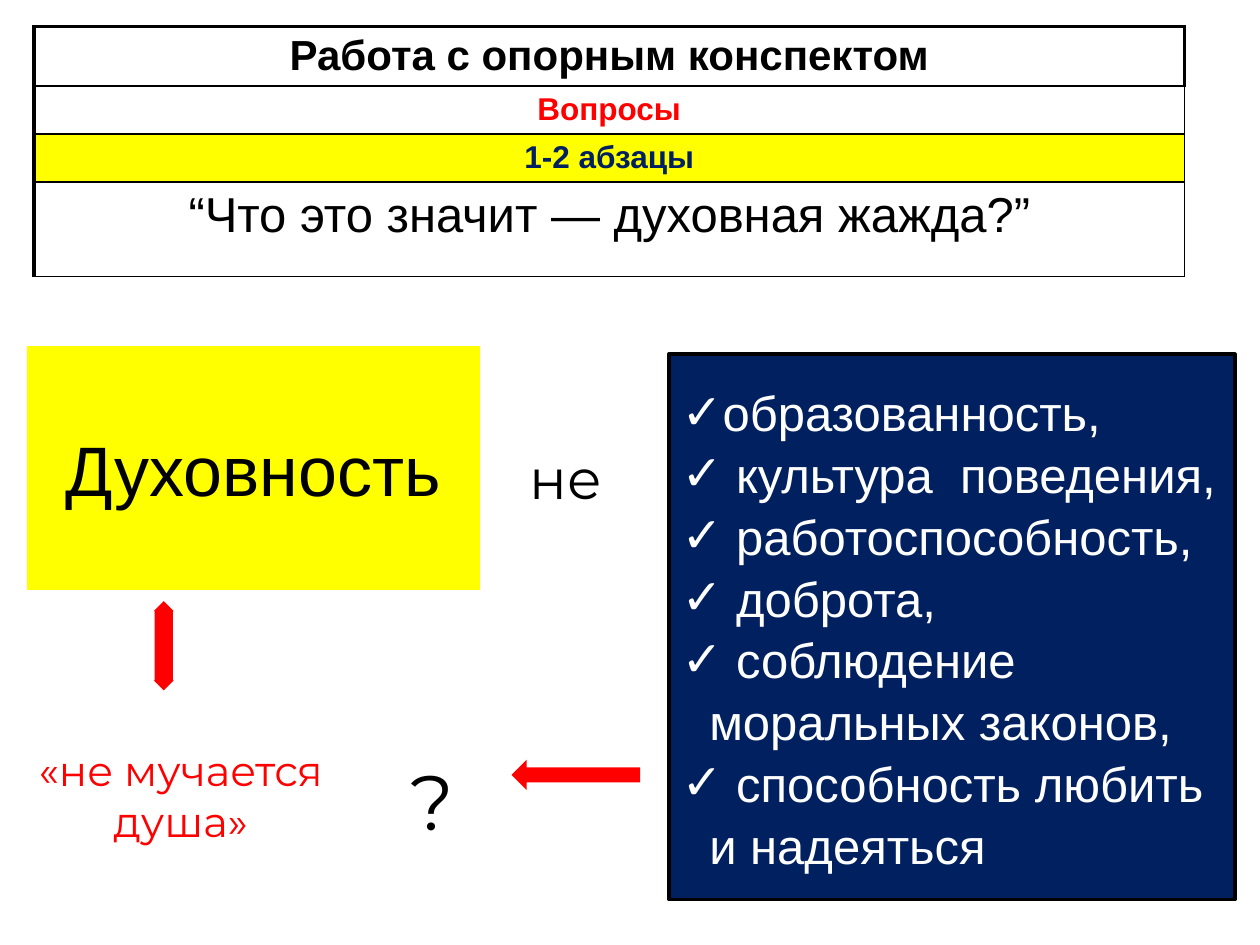
from dataclasses import dataclass

from lxml import etree
from pptx import Presentation
from pptx.dml.color import RGBColor
from pptx.enum import shapes, text
from pptx.oxml import ns
from pptx.util import Inches, Pt


@dataclass(frozen=True)
class Theme:
    black: str = "000000"
    white: str = "FFFFFF"
    red: str = "FF0000"
    yellow: str = "FFFF00"
    navy: str = "002060"
    sans: str = "Arial"
    accent: str = "Montserrat"
    small: int = 18
    heading: int = 24
    body: int = 28
    link: int = 32
    concept: int = 40
    question: int = 44


theme = Theme()


def paint(shape, fill, line=None):
    shape.fill.solid()
    shape.fill.fore_color.rgb = RGBColor.from_string(fill)
    if line:
        shape.line.color.rgb = RGBColor.from_string(line)
        shape.line.width = Pt(2)
    else:
        shape.line.fill.background()


def write(paragraph, words, size, color, font, bold=False, align=text.PP_ALIGN.CENTER):
    paragraph.alignment = align
    run = paragraph.add_run()
    run.text = words
    run.font.size = Pt(size)
    run.font.name = font
    run.font.bold = bold
    run.font.color.rgb = RGBColor.from_string(color)


prs = Presentation()
prs.slide_width, prs.slide_height = Inches(10), Inches(7.5)
slide = prs.slides.add_slide(prs.slide_layouts[1])
empty_title = slide.shapes.title.element
empty_title.getparent().remove(empty_title)

# Qualities that are not yet spirituality
qualities = slide.placeholders[1]
qualities.left, qualities.top = Inches(5.31), Inches(2.81)
qualities.width, qualities.height = Inches(4.49), Inches(4.33)
paint(qualities, theme.navy, theme.black)
frame = qualities.text_frame
frame.word_wrap = True
frame.auto_size = text.MSO_AUTO_SIZE.NONE
frame.vertical_anchor = text.MSO_ANCHOR.MIDDLE
quality_names = [
    "образованность,",
    " культура  поведения,",
    " работоспособность,",
    " доброта,",
    " соблюдение моральных законов,",
    " способность любить и надеяться",
]
for i, name in enumerate(quality_names):
    item = frame.paragraphs[0] if i == 0 else frame.add_paragraph()
    item.space_before = Pt(0)
    item.line_spacing = 1.05
    write(item, name, theme.body, theme.white, theme.sans, align=text.PP_ALIGN.LEFT)
    props = item._p.get_or_add_pPr()
    props.set("marL", str(Inches(0.22)))
    props.set("indent", str(-Inches(0.22)))
    etree.SubElement(props, ns.qn("a:buFont"), typeface=theme.sans)
    etree.SubElement(props, ns.qn("a:buChar"), char="✓")

# Words around the list: place, fill, wording, size, colour, font
labels = [
    ((0.2, 2.73, 3.62, 1.97), theme.yellow, "Духовность", theme.concept, theme.black, theme.sans),
    ((2.8, 5.56, 1.26, 1.57), theme.white, "?", theme.question, theme.black, theme.accent),
    ((0, 5.72, 2.87, 1.18), theme.white, "«не мучается душа»", theme.heading, theme.red, theme.accent),
    ((3.98, 3.2, 1.02, 1.18), theme.white, "не", theme.link, theme.black, theme.accent),
]
for place, fill, words, size, color, font in labels:
    label = slide.shapes.add_shape(shapes.MSO_SHAPE.RECTANGLE, *map(Inches, place))
    label.shadow.inherit = False
    paint(label, fill, theme.white)
    label.text_frame.word_wrap = True
    label.text_frame.vertical_anchor = text.MSO_ANCHOR.MIDDLE
    write(label.text_frame.paragraphs[0], words, size, color, font)

arrows = [
    (shapes.MSO_SHAPE.LEFT_ARROW, (4.06, 6.03, 1.02, 0.24), (0.5, 0.5)),
    (shapes.MSO_SHAPE.UP_DOWN_ARROW, (1.22, 4.77, 0.16, 0.71), (0.5, 0.91)),
]
for preset, place, adjustments in arrows:
    arrow = slide.shapes.add_shape(preset, *map(Inches, place))
    arrow.shadow.inherit = False
    paint(arrow, theme.red)
    for i, value in enumerate(adjustments):
        arrow.adjustments[i] = value

# Heading table: height, wording, size, colour, bold, fill
rows = [
    (0.47, "Работа с опорным конспектом", theme.heading, theme.black, True, None),
    (0.38, "Вопросы", theme.small, theme.red, True, None),
    (0.38, "1-2 абзацы", theme.small, theme.navy, True, theme.yellow),
    (0.75, "“Что это значит\u00a0— духовная жажда?”", theme.body, theme.black, False, None),
]
table = slide.shapes.add_table(
    len(rows), 1, Inches(0.27), Inches(0.21), Inches(9.13), Inches(sum(row[0] for row in rows))
).table
table.first_row = table.horz_banding = False
for i, (height, words, size, color, bold, fill) in enumerate(rows):
    table.rows[i].height = Inches(height)
    cell = table.cell(i, 0)
    write(cell.text_frame.paragraphs[0], words, size, color, theme.sans, bold)
    outer = 2.25 if i == 0 else 1
    props = cell._tc.get_or_add_tcPr()
    for side, width in (("L", 2.25), ("R", outer), ("T", outer), ("B", 1)):
        border = etree.SubElement(props, ns.qn(f"a:ln{side}"), w=str(Pt(width)))
        ink = etree.SubElement(border, ns.qn("a:solidFill"))
        etree.SubElement(ink, ns.qn("a:srgbClr"), val=theme.black)
    if fill:
        cell.fill.solid()
        cell.fill.fore_color.rgb = RGBColor.from_string(fill)
    else:
        cell.fill.background()

prs.save("out.pptx")
